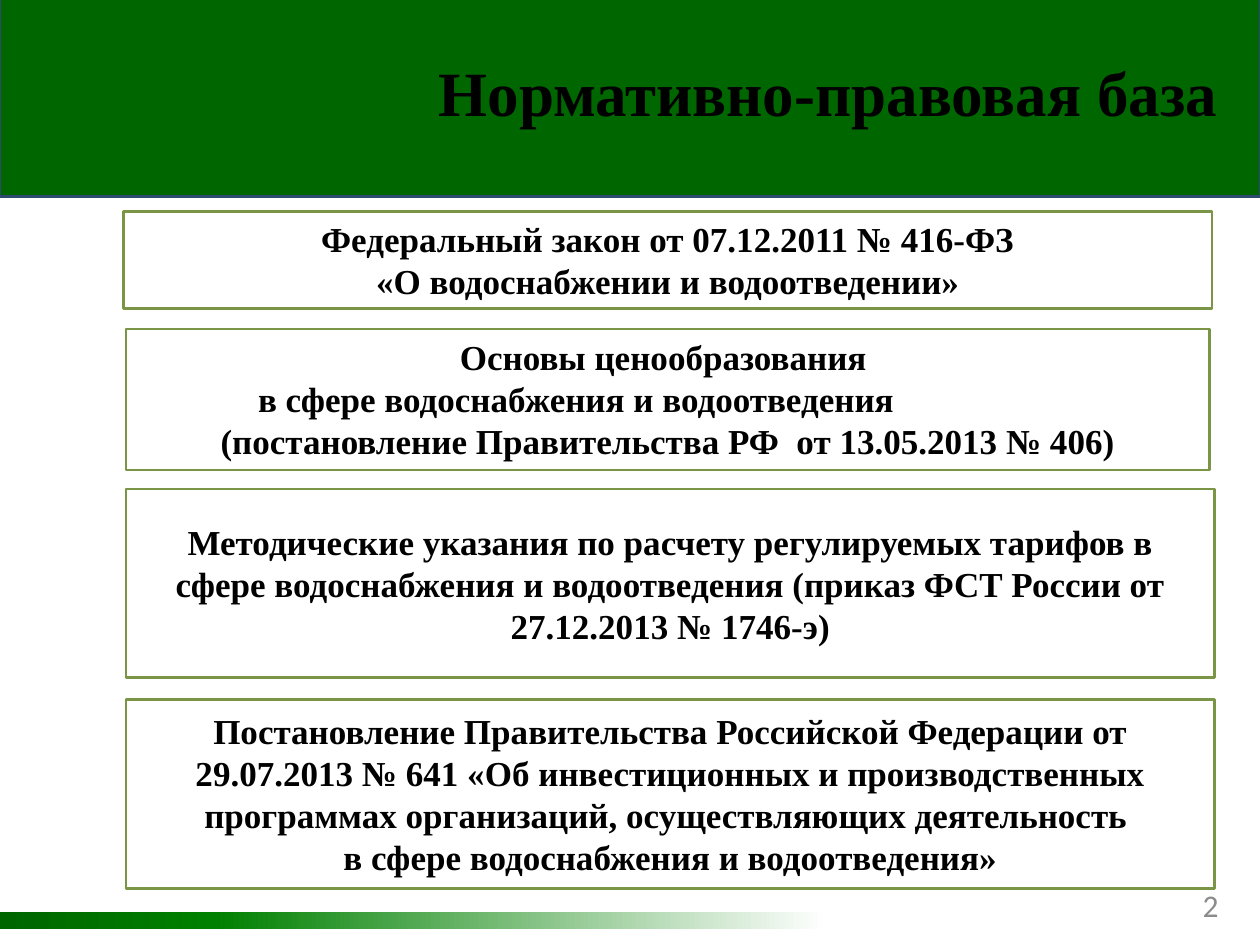
"""Build the slide listing the legal framework for water supply tariffs."""
from lxml import etree
from pptx import Presentation
from pptx.dml.color import RGBColor
from pptx.enum.shapes import MSO_SHAPE as Shape
from pptx.enum.text import MSO_ANCHOR as Anchor, MSO_AUTO_SIZE as AutoSize, PP_ALIGN as Align
from pptx.oxml.ns import qn
from pptx.util import Inches, Pt

COLORS = {
    "banner": "006600", "banner_edge": "2E4B6F", "stripe": "008000",
    "paper": "FFFFFF", "frame": "7B9547", "ink": "000000", "number": "8C8C8C",
}


def rgb(name):
    return RGBColor.from_string(COLORS[name])


def write(frame, lines, size=20, font="Times New Roman", color="ink", bold=True,
          align=Align.CENTER, anchor=Anchor.MIDDLE, fit=AutoSize.NONE, indents=None):
    """Fill a text frame; indents maps a line index to a left indent in inches."""
    frame.word_wrap = True
    frame.auto_size = fit
    frame.vertical_anchor = anchor
    for index, line in enumerate(lines):
        paragraph = frame.paragraphs[0] if index == 0 else frame.add_paragraph()
        paragraph.alignment = align
        if indents and index in indents:
            paragraph.alignment = Align.LEFT
            paragraph._p.get_or_add_pPr().set("marL", str(Inches(indents[index])))
        run = paragraph.add_run()
        run.text = line
        run.font.name, run.font.size, run.font.bold = font, Pt(size), bold
        run.font.color.rgb = rgb(color)


class Deck:
    """Hold the presentation style and the current slide."""

    def __init__(self):
        self.file = Presentation()
        self.file.slide_width, self.file.slide_height = Inches(10), Inches(7.5)
        self.slide = self.file.slides.add_slide(self.file.slide_layouts[5])

    def box(self, left, top, width, height, fill="paper", line="frame"):
        box = self.slide.shapes.add_shape(
            Shape.RECTANGLE, Inches(left), Inches(top), Inches(width), Inches(height))
        box.shadow.inherit = False
        box.fill.solid()
        box.fill.fore_color.rgb = rgb(fill)
        if line:
            box.line.color.rgb = rgb(line)
            box.line.width = Pt(1.5)
        else:
            box.line.fill.background()
        return box

    def banner(self):
        banner = self.box(0, -0.03, 10, 1.59, "banner", "banner_edge")
        self.slide.shapes._spTree.insert(2, banner._element)

    def stripe(self, left, top, width, height, stops):
        stripe = self.box(left, top, width, height, line=None)
        stripe.fill.gradient()
        stripe.fill.gradient_angle = 0
        stop_list = stripe._element.spPr.find(qn("a:gradFill")).find(qn("a:gsLst"))
        for old_stop in list(stop_list):
            stop_list.remove(old_stop)
        for percent, name in stops:
            stop = etree.SubElement(stop_list, qn("a:gs"), pos=str(percent * 1000))
            etree.SubElement(stop, qn("a:srgbClr"), val=COLORS[name])

    def title(self, text):
        title = self.slide.shapes.title
        title.left, title.top = Inches(2.87), Inches(0.29)
        title.width, title.height = Inches(7.4), Inches(0.87)
        write(title.text_frame, [text], size=36)

    def number(self, text):
        number = self.slide.shapes.add_textbox(
            Inches(9.17), Inches(6.98), Inches(0.6), Inches(0.4))
        write(number.text_frame, [text], size=18, font="Calibri", color="number",
              bold=False, align=Align.RIGHT)

    def act(self, place, lines, **style):
        write(self.box(*place).text_frame, lines, **style)


def main():
    deck = Deck()
    deck.banner()
    deck.stripe(0, 7.24, 6.57, 0.13, [(0, "banner"), (26, "stripe"), (100, "paper")])
    deck.number("2")
    deck.title("Нормативно-правовая база")
    growing = {"anchor": Anchor.TOP, "fit": AutoSize.SHAPE_TO_FIT_TEXT}
    deck.act((0.98, 1.68, 8.64, 0.77), [
        "Федеральный закон от 07.12.2011 № 416-ФЗ",
        "«О водоснабжении и водоотведении»"], **growing)
    deck.act((1, 2.61, 8.6, 1.12), [
        "Основы ценообразования ",
        "в сфере водоснабжения и водоотведения",
        "(постановление Правительства РФ  от 13.05.2013 № 406)"],
        indents={1: 0.95}, **growing)
    deck.act((1, 3.88, 8.64, 1.5), [
        "Методические указания по расчету регулируемых тарифов в сфере водоснабжения "
        "и водоотведения (приказ ФСТ России от 27.12.2013 № 1746-э)"])
    deck.act((1, 5.55, 8.64, 1.5), [
        "Постановление Правительства Российской Федерации от 29.07.2013 № 641 "
        "«Об инвестиционных и производственных программах организаций, "
        "осуществляющих деятельность ",
        "в сфере водоснабжения и водоотведения»"])
    deck.file.save("out.pptx")


if __name__ == "__main__":
    main()
